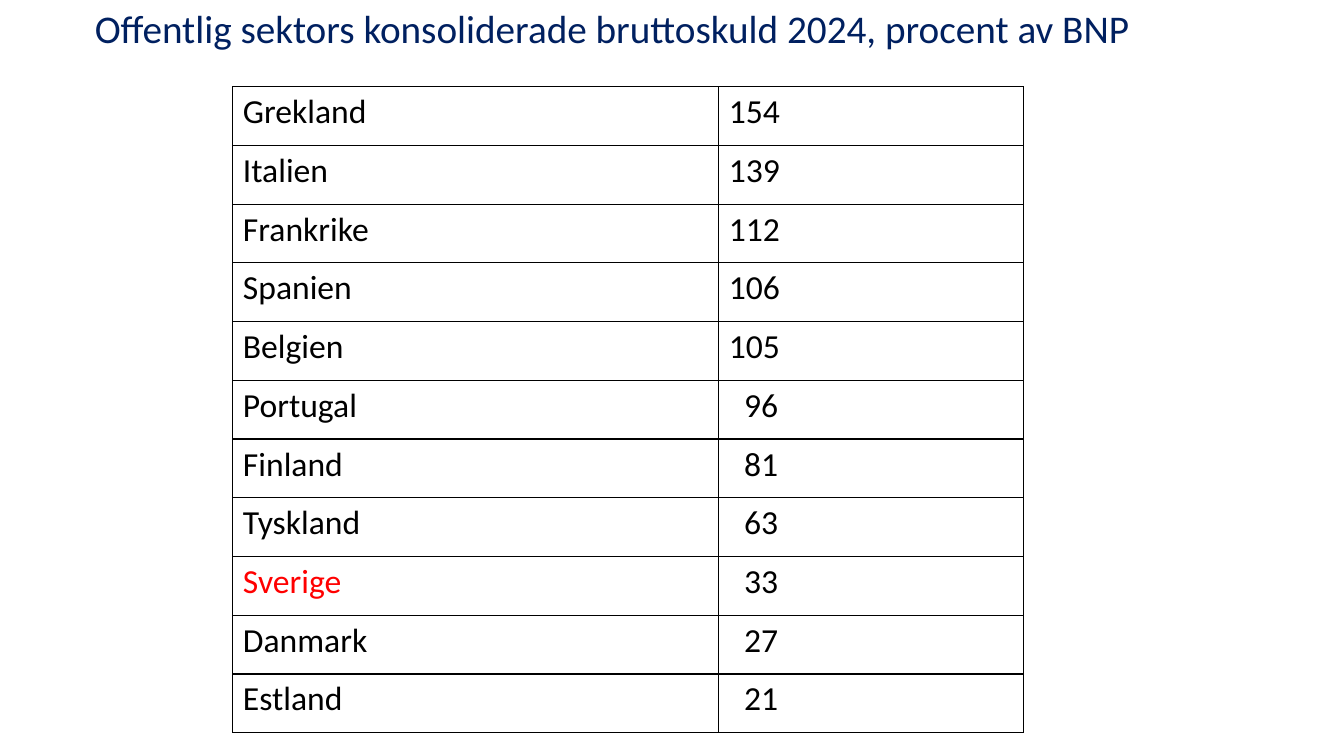
from dataclasses import dataclass

from lxml import etree
from pptx import Presentation, util as u
from pptx.dml.color import RGBColor
from pptx.enum import text
from pptx.oxml import ns

EMU_PER_PX = 9144  # 100 px to the inch


@dataclass(frozen=True)
class Theme:
    font: str = "Calibri"
    heading: str = "002060"
    body: str = "000000"
    highlight: str = "FF0000"
    border: str = "000000"
    heading_pt: int = 28
    body_pt: int = 24
    border_pt: int = 1


@dataclass(frozen=True)
class Box:
    left: int
    top: int
    width: int
    height: int


@dataclass(frozen=True)
class Debt:
    country: str
    percent: int
    highlighted: bool = False


THEME = Theme()
HEADING = "Offentlig sektors konsoliderade bruttoskuld 2024, procent av BNP"
HEADING_BOX = Box(84, -24, 1150, 110)
DEBT_BOX = Box(231, 86, 784, 641)
COUNTRY_WIDTH, PERCENT_WIDTH = 482, 302
INSET, TWO_DIGIT_INSET = 10, 25
DEBTS = [
    Debt("Grekland", 154),
    Debt("Italien", 139),
    Debt("Frankrike", 112),
    Debt("Spanien", 106),
    Debt("Belgien", 105),
    Debt("Portugal", 96),
    Debt("Finland", 81),
    Debt("Tyskland", 63),
    Debt("Sverige", 33, highlighted=True),
    Debt("Danmark", 27),
    Debt("Estland", 21),
]


def px(length: int) -> u.Emu:
    return u.Emu(length * EMU_PER_PX)


def set_font(paragraph, size: int, color: str) -> None:
    paragraph.font.name = THEME.font
    paragraph.font.size = u.Pt(size)
    paragraph.font.color.rgb = RGBColor.from_string(color)


def add_borders(cell) -> None:
    properties = cell._tc.get_or_add_tcPr()
    for side in ("a:lnL", "a:lnR", "a:lnT", "a:lnB"):
        line = etree.SubElement(properties, ns.qn(side), w=str(u.Pt(THEME.border_pt)))
        fill = etree.SubElement(line, ns.qn("a:solidFill"))
        etree.SubElement(fill, ns.qn("a:srgbClr"), val=THEME.border)


def fill_cell(cell, content: str, color: str, inset: int) -> None:
    add_borders(cell)
    cell.fill.background()
    cell.margin_left = px(inset)
    cell.text = content
    set_font(cell.text_frame.paragraphs[0], THEME.body_pt, color)


def draw_heading(slide) -> None:
    heading = slide.shapes.title
    heading.left, heading.top = px(HEADING_BOX.left), px(HEADING_BOX.top)
    heading.width, heading.height = px(HEADING_BOX.width), px(HEADING_BOX.height)
    frame = heading.text_frame
    frame.text = HEADING
    frame.vertical_anchor = text.MSO_ANCHOR.MIDDLE
    line = frame.paragraphs[0]
    line.alignment = text.PP_ALIGN.LEFT
    line.line_spacing = 0.9
    set_font(line, THEME.heading_pt, THEME.heading)


def draw_debts(slide) -> None:
    debt_table = slide.shapes.add_table(
        len(DEBTS), 2, px(DEBT_BOX.left), px(DEBT_BOX.top),
        px(DEBT_BOX.width), px(DEBT_BOX.height)).table
    debt_table.first_row = debt_table.horz_banding = False
    for column, width in zip(debt_table.columns, (COUNTRY_WIDTH, PERCENT_WIDTH)):
        column.width = px(width)
    for row, debt in zip(debt_table.rows, DEBTS):
        country, percent = row.cells
        fill_cell(country, debt.country,
                  THEME.highlight if debt.highlighted else THEME.body, INSET)
        # Two-digit values are indented under the three-digit ones
        fill_cell(percent, str(debt.percent), THEME.body,
                  INSET if debt.percent >= 100 else TWO_DIGIT_INSET)


def main() -> None:
    deck = Presentation()
    deck.slide_width, deck.slide_height = px(1333), px(750)
    slide = deck.slides.add_slide(deck.slide_layouts.get_by_name("Title Only"))
    draw_heading(slide)
    draw_debts(slide)
    deck.save("out.pptx")


if __name__ == "__main__":
    main()
